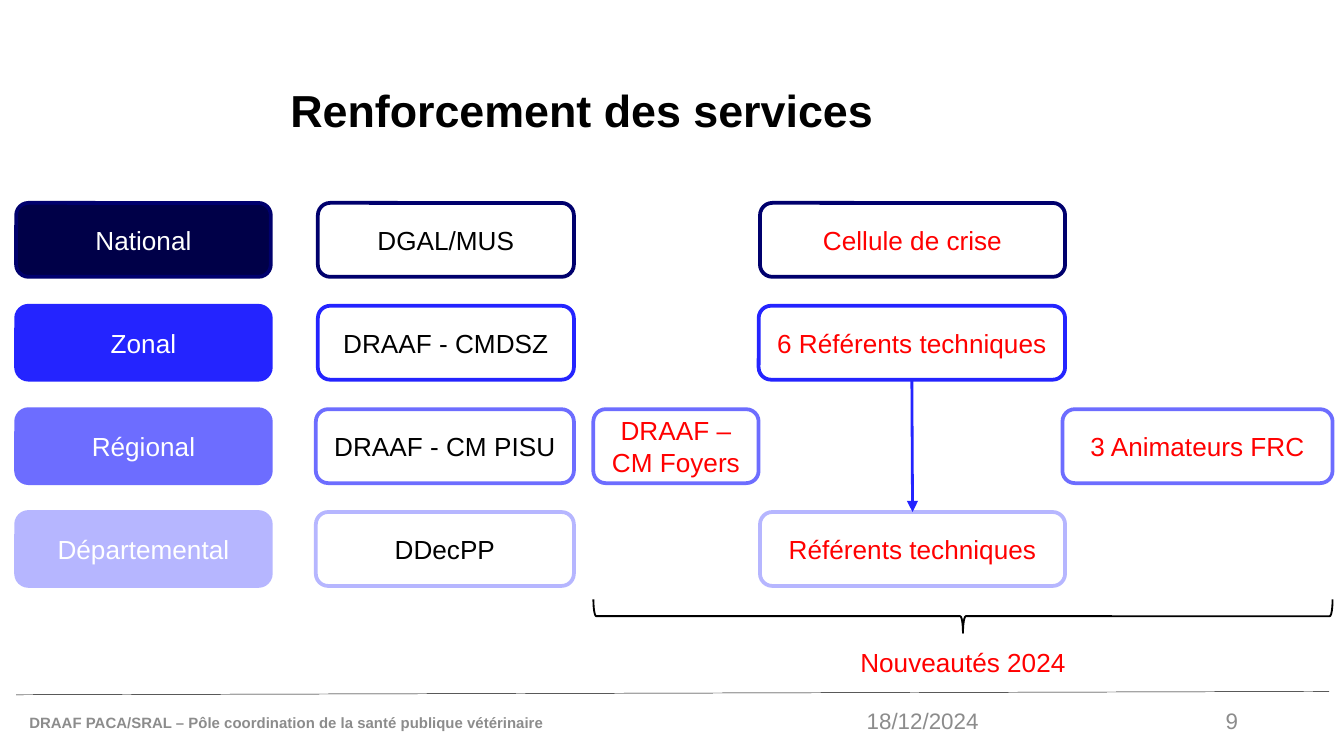
from dataclasses import dataclass
from typing import NamedTuple

from lxml.etree import SubElement
from pptx import Presentation
from pptx.dml.color import RGBColor
from pptx.enum.shapes import MSO_CONNECTOR, MSO_SHAPE
from pptx.enum.text import MSO_ANCHOR, PP_ALIGN
from pptx.oxml.ns import qn
from pptx.util import Pt

EMU_PER_PX = 4572


@dataclass(frozen=True)
class Theme:
    """Colours, font and type sizes of the slide."""
    font: str = "Arial"
    black: str = "000000"
    white: str = "FFFFFF"
    red: str = "FF0000"
    grey: str = "8C8C8C"
    national: str = "000048"
    national_edge: str = "00006D"
    zonal: str = "2424FF"
    regional: str = "6D6DFF"
    departmental: str = "B6B6FF"
    title_size: int = 24
    box_size: int = 14
    footer_size: int = 12
    source_size: int = 8


class Box(NamedTuple):
    """A rectangle in px."""
    left: int
    top: int
    width: int
    height: int

    def inner(self, left, top, width, height):
        """Return a box placed relative to this one."""
        return Box(self.left + left, self.top + top, width, height)

    def emu(self):
        """Return the four lengths in EMU."""
        return [length * EMU_PER_PX for length in self]


class Level(NamedTuple):
    """One administrative level and its cells (left, width, text, colour)."""
    name: str
    fill: str
    edge: str
    cells: tuple


THEME = Theme()
LEVELS = (
    Level("National", THEME.national, THEME.national_edge, (
        (449, 381, "DGAL/MUS", THEME.black),
        (1107, 454, "Cellule de crise", THEME.red))),
    Level("Zonal", THEME.zonal, THEME.zonal, (
        (449, 381, "DRAAF - CMDSZ", THEME.black),
        (1105, 456, "6 Référents techniques", THEME.red))),
    Level("Régional", THEME.regional, THEME.regional, (
        (446, 384, "DRAAF - CM PISU", THEME.black),
        (859, 246, "DRAAF – CM Foyers", THEME.red),
        (1557, 402, "3 Animateurs FRC", THEME.red))),
    Level("Départemental", THEME.departmental, THEME.departmental, (
        (446, 384, "DDecPP", THEME.black),
        (1107, 454, "Référents techniques", THEME.red))),
)


def write_text(shape, text, size=THEME.box_size, color=THEME.black, bold=False,
               align=PP_ALIGN.LEFT, line_spacing=None):
    """Write one formatted paragraph into a shape."""
    frame = shape.text_frame
    frame.word_wrap = True
    frame.vertical_anchor = MSO_ANCHOR.MIDDLE
    paragraph = frame.paragraphs[0]
    paragraph.alignment = align
    paragraph.line_spacing = line_spacing
    run = paragraph.add_run()
    run.text = text
    run.font.name = THEME.font
    run.font.size = Pt(size)
    run.font.bold = bold
    run.font.color.rgb = RGBColor.from_string(color)


def style_line(line, color, width):
    """Set the colour and width of a line."""
    line.color.rgb = RGBColor.from_string(color)
    line.width = Pt(width)


def add_outline(slide, kind, box, edge, width, fill=None):
    """Add a preset shape without shadow, filled or hollow."""
    shape = slide.shapes.add_shape(kind, *box.emu())
    shape.shadow.inherit = False
    style_line(shape.line, edge, width)
    if fill:
        shape.fill.solid()
        shape.fill.fore_color.rgb = RGBColor.from_string(fill)
    else:
        shape.fill.background()
    return shape


def add_line(slide, start, end, color, width):
    """Add a straight connector without shadow between two px points."""
    points = [length * EMU_PER_PX for length in (*start, *end)]
    connector = slide.shapes.add_connector(MSO_CONNECTOR.STRAIGHT, *points)
    SubElement(connector._element.spPr, qn("a:effectLst"))
    style_line(connector.line, color, width)
    return connector


def add_title(slide, box):
    """Place the title placeholder."""
    title = slide.shapes.title
    title.left, title.top, title.width, title.height = box.emu()
    write_text(title, "Renforcement des services", size=THEME.title_size,
               bold=True, line_spacing=0.9)


def add_level(slide, box, level):
    """Add the row of one level and return its boxes by text."""
    cells = ((0, 379, level.name, THEME.white),) + level.cells
    shapes = {}
    for left, width, text, color in cells:
        fill = level.fill if text == level.name else None
        shape = add_outline(slide, MSO_SHAPE.ROUNDED_RECTANGLE,
                            box.inner(left, 0, width, box.height),
                            level.edge, 2, fill)
        write_text(shape, text, color=color, align=PP_ALIGN.CENTER)
        shapes[text] = shape
    return shapes


def add_levels(slide, box):
    """Add the evenly spaced level rows and the arrow between referents."""
    row_height = 110
    step = (box.height - row_height) / (len(LEVELS) - 1)
    shapes = {}
    for index, level in enumerate(LEVELS):
        row = box.inner(0, round(index * step), box.width, row_height)
        shapes.update(add_level(slide, row, level))
    arrow = add_line(slide, (0, 0), (0, 0), THEME.zonal, 1.5)
    arrow.begin_connect(shapes["6 Référents techniques"], 2)
    arrow.end_connect(shapes["Référents techniques"], 0)
    SubElement(arrow.line._get_or_add_ln(), qn("a:tailEnd"), type="triangle")


def add_news(slide, box):
    """Add the brace turned downwards and its caption."""
    depth = 50
    shift = (box.width - depth) // 2
    upright = box.inner(shift, -shift, depth, box.width)
    brace = add_outline(slide, MSO_SHAPE.RIGHT_BRACE, upright, THEME.black, 1)
    brace.rotation = 90
    caption = slide.shapes.add_textbox(*box.inner(332, depth, 436, 86).emu())
    write_text(caption, "Nouveautés 2024", color=THEME.red, align=PP_ALIGN.CENTER)


def add_footer(slide, box):
    """Add the rule, the source, the date and the slide number."""
    add_line(slide, (box.left, box.top + 5), (box.left + box.width, box.top),
             THEME.black, 0.25)
    entries = (
        (0, 17, 826, "DRAAF PACA/SRAL – Pôle coordination de la santé publique vétérinaire",
         {"size": THEME.source_size, "bold": True}),
        (1246, 14, 218, "18/12/2024", {"size": THEME.footer_size}),
        (1714, 14, 124, "9", {"size": THEME.footer_size, "align": PP_ALIGN.RIGHT}),
    )
    for left, top, width, text, text_format in entries:
        entry = slide.shapes.add_textbox(*box.inner(left, top, width, 60).emu())
        write_text(entry, text, color=THEME.grey, **text_format)


def main():
    """Build and save the slide."""
    presentation = Presentation()
    presentation.slide_width = 2000 * EMU_PER_PX
    presentation.slide_height = 1125 * EMU_PER_PX
    slide = presentation.slides.add_slide(presentation.slide_layouts[5])
    add_title(slide, Box(412, 59, 1450, 218))
    add_levels(slide, Box(24, 302, 1960, 570))
    add_news(slide, Box(883, 892, 1100, 136))
    add_footer(slide, Box(24, 1029, 1954, 77))
    presentation.save("out.pptx")


if __name__ == "__main__":
    main()
